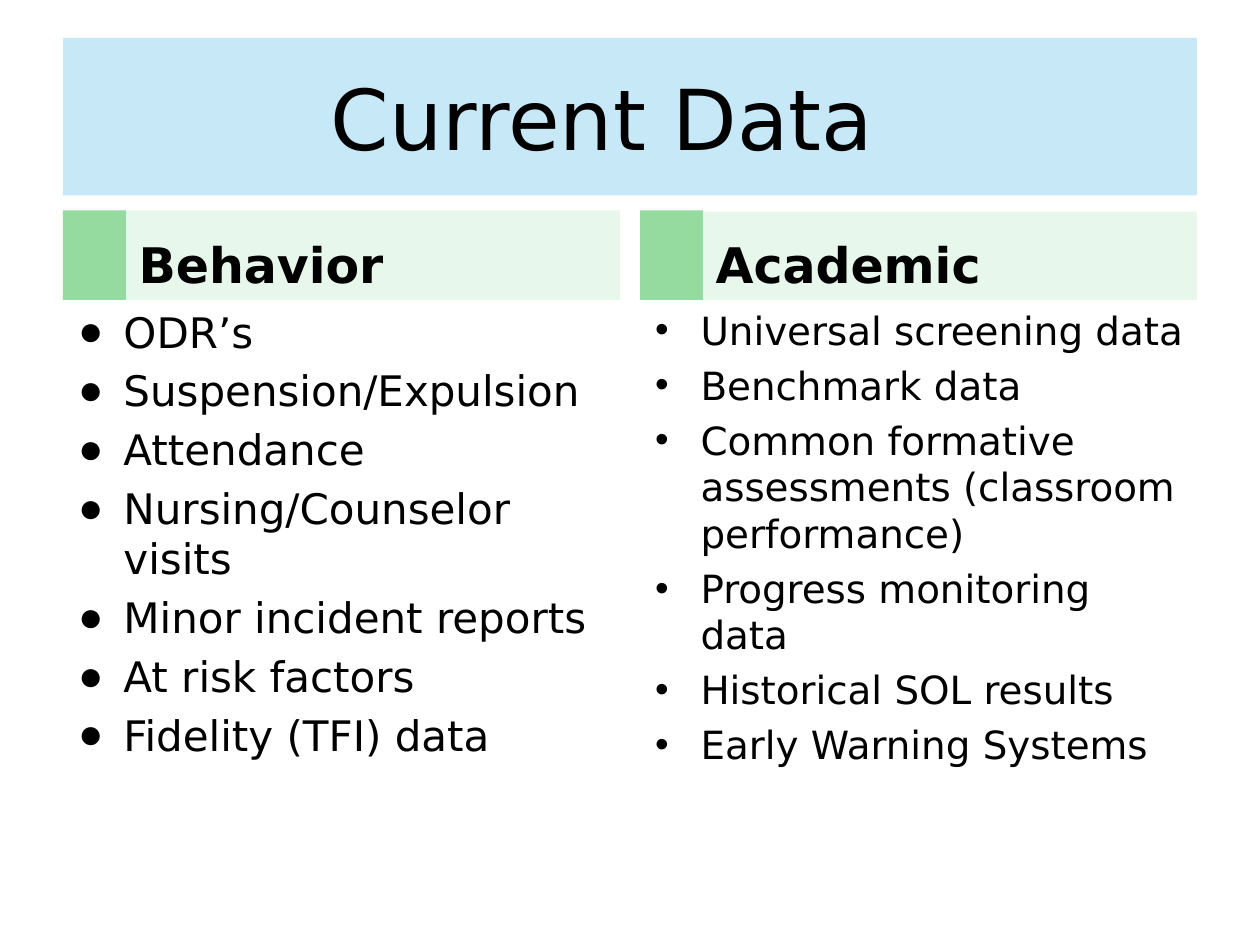
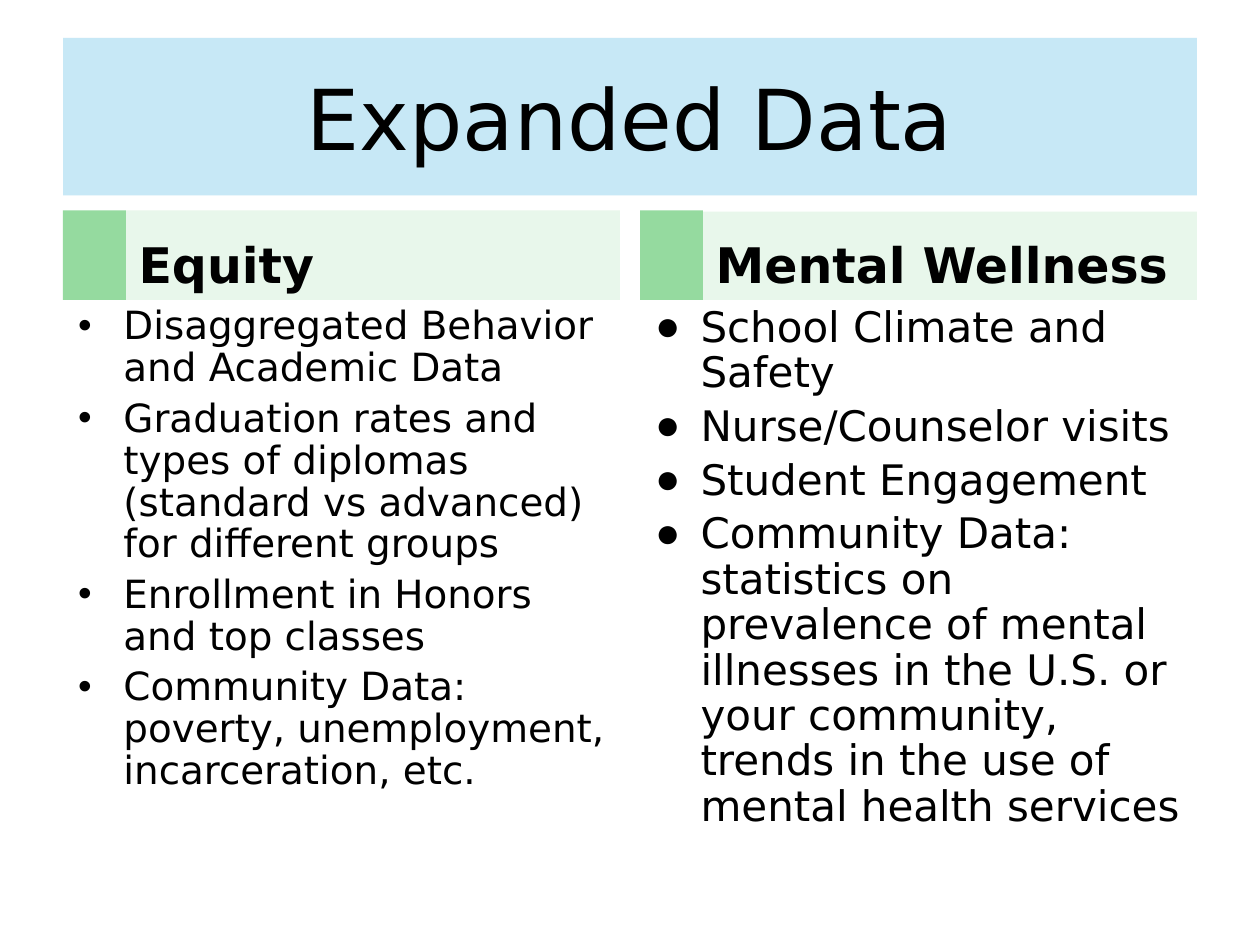
from lxml.etree import SubElement
from pptx import Presentation
from pptx.dml.color import RGBColor
from pptx.enum.shapes import MSO_SHAPE
from pptx.enum.text import MSO_ANCHOR, MSO_AUTO_SIZE, PP_ALIGN
from pptx.oxml.ns import qn
from pptx.util import Inches, Pt

FONT = "DejaVu Sans"
BLACK, SKY, GREEN, MINT = "000000", "A9DCF2", "95DA9F", "E8F7EB"
COMPARE = 4  # layout with a title and two headed lists
COLS = (0.5, 5.08)
HEAD_TOPS = (1.67, 1.68)
LIST_TOP, WIDE, MARK = 2.38, 4.42, 0.5


def color(code):
    return RGBColor.from_string(code)


class Deck:
    def __init__(self):
        self.prs = Presentation()
        self.prs.slide_width = Inches(10)
        self.prs.slide_height = Inches(7.5)
        self.slide = None

    def start(self):
        layout = self.prs.slide_layouts[COMPARE]
        self.slide = self.prs.slides.add_slide(layout)

    def paint(self, shape, code, alpha=None):
        shape.fill.solid()
        shape.fill.fore_color.rgb = color(code)
        if alpha:
            fill = shape.fill._xPr.find(qn("a:solidFill"))
            SubElement(fill[0], qn("a:alpha"), val=str(alpha * 1000))

    def style(self, para, size, bold=False):
        font = para.font
        font.name, font.size, font.bold = FONT, Pt(size), bold
        font.color.rgb = color(BLACK)

    def place(self, idx, box, anchor):
        """Move a placeholder and return it with its text frame."""
        shape = self.slide.placeholders[idx]
        shape.left, shape.top, shape.width, shape.height = map(Inches, box)
        frame = shape.text_frame
        frame.word_wrap = True
        frame.auto_size = MSO_AUTO_SIZE.NONE
        frame.vertical_anchor = anchor
        frame.margin_left = frame.margin_right = Inches(0.1)
        frame.margin_top = frame.margin_bottom = Inches(0.05)
        return shape, frame

    def title(self, text, shift=0):
        """Add the title band; shift moves the centred text to the left."""
        shape, frame = self.place(0, (0.5, 0.3, 9, 1.25), MSO_ANCHOR.MIDDLE)
        self.paint(shape, SKY, 65)
        frame.margin_right = Inches(0.1 + 2 * shift)
        frame.text = text
        para = frame.paragraphs[0]
        para.alignment = PP_ALIGN.CENTER
        self.style(para, 48)

    def mark(self, col):
        top = HEAD_TOPS[0]
        box = (COLS[col], top, MARK, LIST_TOP - top)
        shape = self.slide.shapes.add_shape(MSO_SHAPE.RECTANGLE, *map(Inches, box))
        self.paint(shape, GREEN)
        shape.line.fill.background()
        shape.shadow.inherit = False

    def head(self, col, text):
        top = HEAD_TOPS[col]
        box = (COLS[col] + MARK, top, WIDE - MARK, LIST_TOP - top)
        shape, frame = self.place(1 + 2 * col, box, MSO_ANCHOR.BOTTOM)
        self.paint(shape, MINT)
        frame.text = text
        para = frame.paragraphs[0]
        para.space_before = Pt(0)
        self.style(para, 28, True)

    def bullet(self, para, sign):
        props = para._p.get_or_add_pPr()
        props.set("marL", str(Inches(0.38)))
        props.set("indent", str(Inches(-0.36)))
        tint = SubElement(props, qn("a:buClr"))
        SubElement(tint, qn("a:srgbClr"), val=BLACK)
        SubElement(props, qn("a:buChar"), char=sign)

    def items(self, col, sign, size, lines, pitch):
        box = (COLS[col], LIST_TOP, WIDE, 4.32)
        frame = self.place(2 + 2 * col, box, MSO_ANCHOR.TOP)[1]
        frame.text = "\n".join(lines)
        for num, para in enumerate(frame.paragraphs):
            self.bullet(para, sign)
            para.line_spacing = pitch
            para.space_before = Pt(4.8 if num else 0)
            self.style(para, size)

    def page(self, text, cols, pitch=1.0, shift=0):
        self.start()
        self.title(text, shift)
        for col, (head, sign, size, lines) in enumerate(cols):
            self.mark(col)
            self.head(col, head)
            self.items(col, sign, size, lines, pitch)


def main():
    deck = Deck()

    # Current data
    deck.page("Current Data", [
        ("Behavior", "●", 24, [
            "ODR’s",
            "Suspension/Expulsion",
            "Attendance",
            "Nursing/Counselor visits",
            "Minor incident reports",
            "At risk factors",
            "Fidelity (TFI) data",
        ]),
        ("Academic", "•", 22.2, [
            "Universal screening data",
            "Benchmark data",
            "Common formative assessments (classroom performance)",
            "Progress monitoring data",
            "Historical SOL results",
            "Early Warning Systems",
        ]),
    ], shift=0.22)

    # Expanded data
    deck.page("Expanded Data", [
        ("Equity", "•", 22.2, [
            "Disaggregated Behavior and Academic Data",
            "Graduation rates and types of diplomas "
            "(standard vs advanced) for different groups",
            "Enrollment in Honors and top classes",
            "Community Data: poverty, unemployment, incarceration, etc.",
        ]),
        ("Mental Wellness", "●", 24, [
            "School Climate and Safety",
            "Nurse/Counselor visits",
            "Student Engagement",
            "Community Data: statistics on prevalence of mental illnesses "
            "in the U.S. or your community, trends in the use of "
            "mental health services",
        ]),
    ], pitch=0.9)

    deck.prs.save("out.pptx")


if __name__ == "__main__":
    main()
